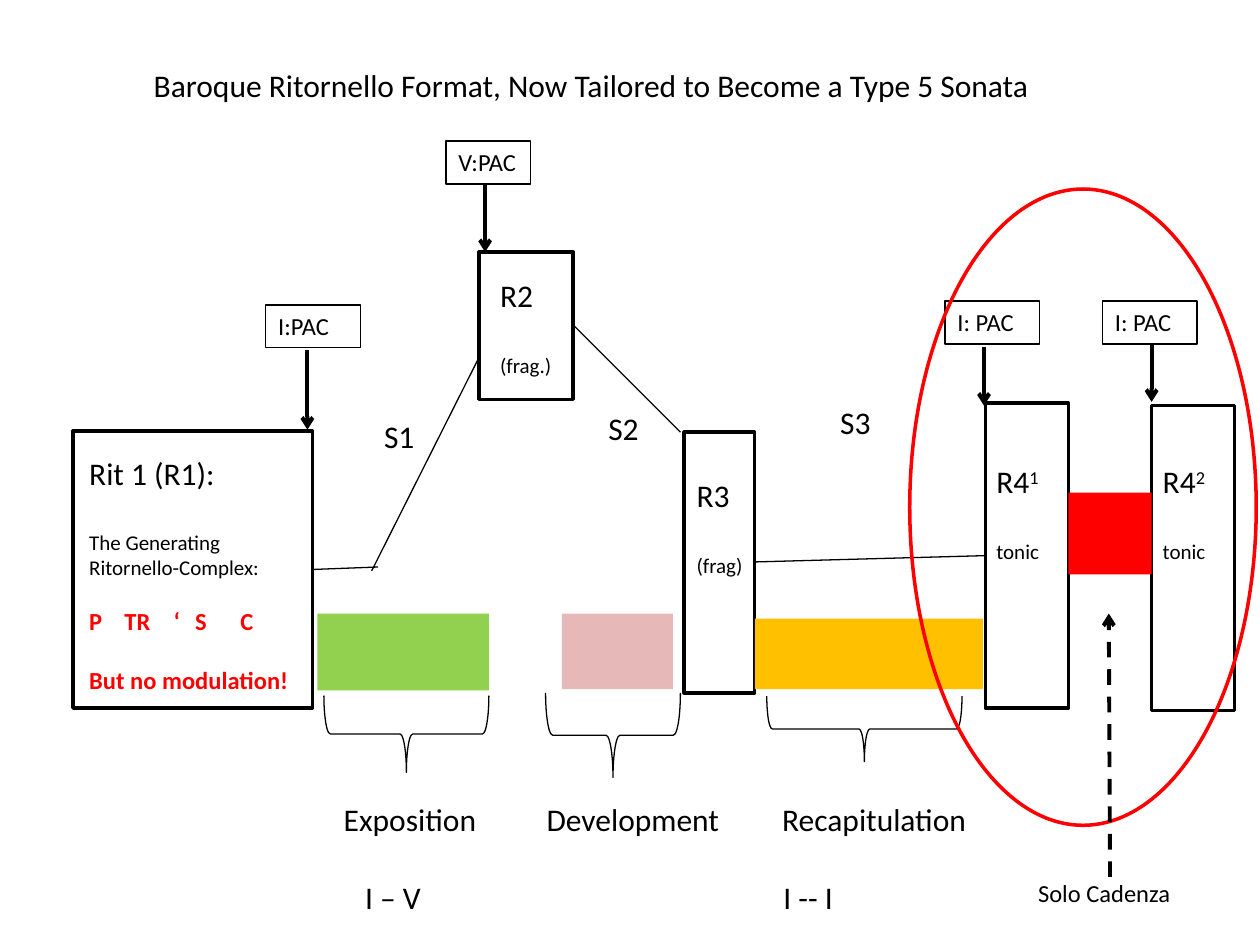
import pptx
import pptx.dml.color
import pptx.enum.dml
import pptx.enum.shapes
import pptx.enum.text
import pptx.oxml
import pptx.oxml.ns
import pptx.util

Inches = pptx.util.Inches
Pt = pptx.util.Pt
SHAPE = pptx.enum.shapes.MSO_SHAPE
BLACK, RED = "000000", "FF0000"


def rgb(value):
    return pptx.dml.color.RGBColor.from_string(value)


def append_xml(parent, tag, **attributes):
    element = pptx.oxml.parse_xml(f"<a:{tag} {pptx.oxml.ns.nsdecls('a')}/>")
    for name, value in attributes.items():
        element.set(name, str(value))
    parent.append(element)
    return element


def add_run(paragraph, text, size=18, color=BLACK, bold=False, raised=False):
    run = paragraph.add_run()
    run.text = text
    run.font.name = "Calibri"
    run.font.size = Pt(size)
    run.font.bold = bold
    run.font.color.rgb = rgb(color)
    if raised:
        run.font._element.set("baseline", "30000")


def write(frame, text, before=0, tabs=(), superscript="", **font):
    """Add one left-aligned paragraph, using the empty first one if it is free."""
    paragraph = frame.paragraphs[0]
    if paragraph.runs:
        paragraph = frame.add_paragraph()
    paragraph.alignment = pptx.enum.text.PP_ALIGN.LEFT
    paragraph.space_before = Pt(before)
    if tabs:
        stops = append_xml(paragraph._p.get_or_add_pPr(), "tabLst")
        for stop in tabs:
            append_xml(stops, "tab", pos=Inches(stop), algn="l")
    add_run(paragraph, text, **font)
    if superscript:
        add_run(paragraph, superscript, raised=True, **font)


def prepare_frame(frame):
    frame.word_wrap = True
    frame.auto_size = pptx.enum.text.MSO_AUTO_SIZE.NONE
    frame.vertical_anchor = pptx.enum.text.MSO_ANCHOR.TOP
    return frame


def add_label(slide, box, text="", **format):
    label = slide.shapes.add_textbox(*map(Inches, box))
    frame = prepare_frame(label.text_frame)
    if text:
        write(frame, text, **format)
    return frame


def add_outline(slide, kind, box, fill=None, line=None, width=2, rotation=0):
    shape = slide.shapes.add_shape(kind, *map(Inches, box))
    shape.shadow.inherit = False
    shape.rotation = rotation
    if fill:
        shape.fill.solid()
        shape.fill.fore_color.rgb = rgb(fill)
    else:
        shape.fill.background()
    if line:
        shape.line.color.rgb = rgb(line)
        shape.line.width = Pt(width)
    else:
        shape.line.fill.background()
    return shape


def add_line(slide, start, end, width=0.75, arrow=False, dashed=False):
    line = slide.shapes.add_connector(
        pptx.enum.shapes.MSO_CONNECTOR.STRAIGHT, *map(Inches, (*start, *end)))
    line.line.color.rgb = rgb(BLACK)
    line.line.width = Pt(width)
    if dashed:
        line.line.dash_style = pptx.enum.dml.MSO_LINE.DASH
    if arrow:
        append_xml(line.line._get_or_add_ln(), "tailEnd", type="arrow")
    append_xml(line._element.spPr, "effectLst")


def add_cadence(slide, text, box, x, top, bottom):
    """A boxed cadence name with an arrow down to its ritornello."""
    cadence = add_outline(slide, SHAPE.RECTANGLE, box, line=BLACK, width=0.75)
    write(prepare_frame(cadence.text_frame), text, size=14)
    add_line(slide, (x, top), (x, bottom), width=2.25, arrow=True)


def add_ritornello(slide, box, label_box, name, note, superscript=""):
    add_outline(slide, SHAPE.RECTANGLE, box, line=BLACK)
    frame = add_label(slide, label_box, name, superscript=superscript)
    write(frame, note, size=12, before=22)


def main():
    presentation = pptx.Presentation()
    presentation.slide_width, presentation.slide_height = Inches(10), Inches(7.5)
    slide = presentation.slides.add_slide(presentation.slide_layouts[5])

    # Title
    title = slide.shapes.title
    title.left, title.top, title.width, title.height = map(
        Inches, (1.12, 0.47, 7.8, 0.4))
    write(prepare_frame(title.text_frame),
          "Baroque Ritornello Format, Now Tailored to Become a Type 5 Sonata")

    # First ritornello and its contents
    add_outline(slide, SHAPE.RECTANGLE, (0.58, 3.42, 1.9, 2.2), line=BLACK)
    opening = add_label(slide, (0.61, 3.55, 1.8, 2.02), "Rit 1 (R1):")
    write(opening, "The Generating", size=12, before=22)
    write(opening, "Ritornello-Complex:", size=12)
    write(opening, "P\tTR\t‘\tS\tC", size=14, color=RED, bold=True,
          before=14.6, tabs=(0.28, 0.67, 0.84, 1.2))
    write(opening, "But no modulation!", size=14, color=RED, bold=True, before=17)

    # Later ritornellos
    for ritornello in (
        ((3.8, 2, 0.75, 1.17), (3.87, 2.14, 0.68, 0.91), "R2", "(frag.)"),
        ((5.43, 3.43, 0.56, 2.07), (5.43, 3.73, 0.57, 0.91), "R3", "(frag)"),
        ((7.82, 3.2, 0.66, 2.42), (7.81, 3.62, 0.67, 0.91), "R4", "tonic", "1"),
        ((9.14, 3.22, 0.66, 2.42), (9.13, 3.62, 0.67, 0.91), "R4", "tonic", "2"),
    ):
        add_ritornello(slide, *ritornello)

    # Solo paths between ritornellos
    for start, end in (
        ((2.48, 4.52), (3, 4.5)),
        ((2.95, 4.53), (3.8, 2.84)),
        ((4.55, 2.58), (5.4, 3.43)),
        ((5.99, 4.46), (7.82, 4.41)),
    ):
        add_line(slide, start, end)
    for solo, x, y in (("S1", 2.95, 3.26), ("S2", 4.73, 3.2), ("S3", 6.57, 3.15)):
        add_label(slide, (x, y, 0.5, 0.4), solo)

    # Cadences
    for cadence in (
        ("I:PAC", (2.11, 2.42, 0.75, 0.34), 2.44, 2.78, 3.41),
        ("V:PAC", (3.54, 1.12, 0.67, 0.34), 3.85, 1.46, 2),
        ("I: PAC", (7.5, 2.39, 0.75, 0.34), 7.81, 2.75, 3.22),
        ("I: PAC", (8.75, 2.39, 0.75, 0.34), 9.14, 2.72, 3.19),
    ):
        add_cadence(slide, *cadence)

    # Sonata sections: colour block, brace and name
    for name, x, block, color, brace in (
        ("Exposition", 2.63, (2.52, 4.87, 1.36, 0.61), "92D050",
         (2.92, 5.17, 0.61, 1.31)),
        ("Development", 4.24, (4.46, 4.87, 0.88, 0.6), "E6B9B8",
         (4.53, 5.3, 0.67, 1.07)),
        ("Recapitulation", 6.11, (5.99, 4.91, 1.81, 0.56), "FFC000",
         (6.6, 5.01, 0.52, 1.55)),
    ):
        add_outline(slide, SHAPE.RECTANGLE, block, fill=color)
        add_outline(slide, SHAPE.RIGHT_BRACE, brace, line=BLACK, width=0.75,
                    rotation=90)
        add_label(slide, (x, 6.3, 1.8, 0.4), name)
    for keys, x in (("I – V", 2.8), ("I -- I", 6.12)):
        add_label(slide, (x, 6.92, 1, 0.4), keys)

    # Solo cadenza inside the closing ritornello
    add_outline(slide, SHAPE.RECTANGLE, (8.48, 3.91, 0.66, 0.65), fill=RED)
    add_outline(slide, SHAPE.OVAL, (7.22, 1.5, 2.75, 5.05), line=RED)
    add_line(slide, (8.81, 6.96), (8.8, 4.87), width=2.25, arrow=True, dashed=True)
    add_label(slide, (8.14, 6.92, 1.45, 0.34), "Solo Cadenza", size=14)

    presentation.save("out.pptx")


if __name__ == "__main__":
    main()
